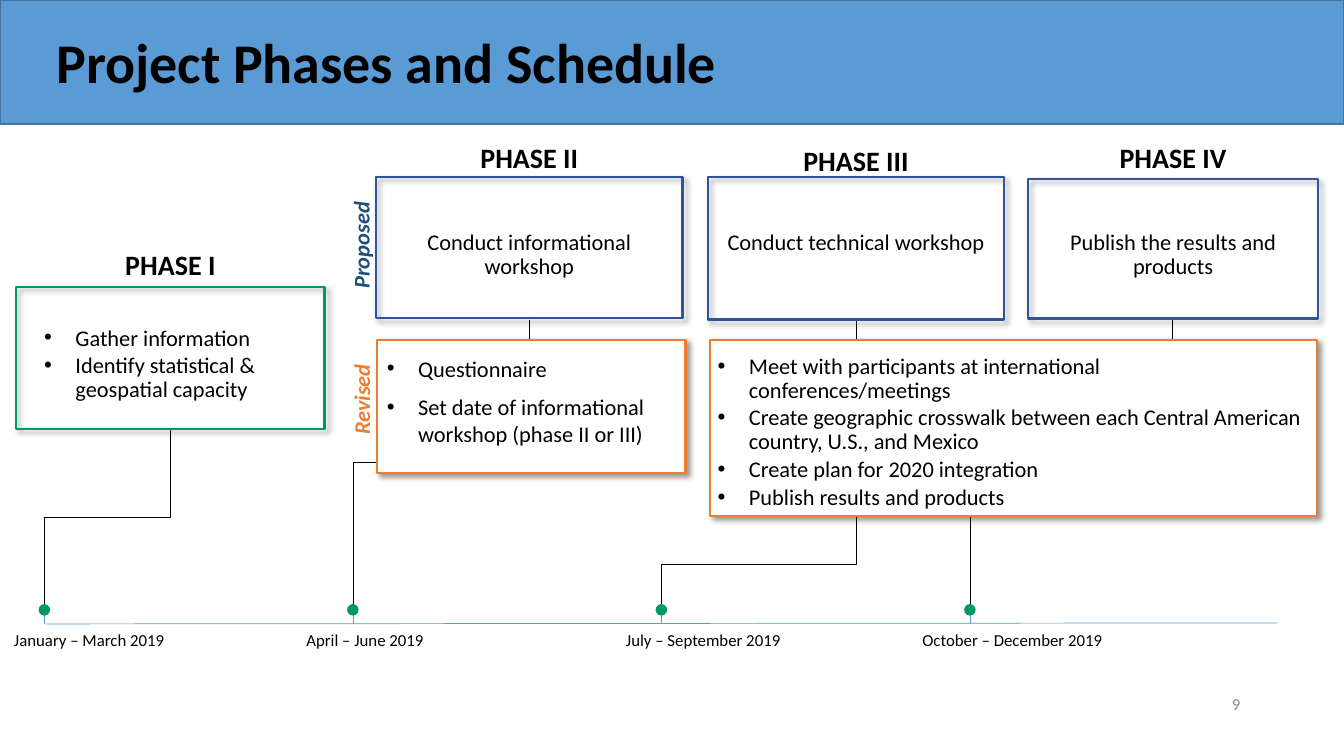
from dataclasses import dataclass

from lxml import etree
from pptx import Presentation
from pptx.dml.color import RGBColor
from pptx.enum.shapes import MSO_CONNECTOR as Link, MSO_SHAPE as Form
from pptx.enum.text import MSO_ANCHOR as Anchor, PP_ALIGN as Align
from pptx.oxml import parse_xml
from pptx.oxml.ns import nsdecls, qn
from pptx.util import Inches, Pt


@dataclass(frozen=True)
class Theme:
    """Colours, font and type sizes of the slide."""
    font: str = "Calibri"
    black: str = "000000"
    white: str = "FFFFFF"
    grey: str = "8C8C8C"
    sky: str = "5B9BD5"
    rim: str = "43739E"
    green: str = "009964"
    blue: str = "2F5597"
    navy: str = "1F4E79"
    orange: str = "ED7D31"
    title: int = 40
    head: int = 20
    body: int = 16
    small: int = 12


THEME = Theme()
BULLET = 0.31


def add_text(slide, lines, left, top, width, height, size=THEME.body,
             color=THEME.black, bold=False, italic=False, align=Align.LEFT,
             anchor=Anchor.TOP, lead=1.0, before=0, after=0, bullet=False,
             turn=0, wrap=True):
    """Add a text box with one paragraph per line and return its frame."""
    box = slide.shapes.add_textbox(
        Inches(left), Inches(top), Inches(width), Inches(height))
    box.rotation = turn
    frame = box.text_frame
    frame.word_wrap = wrap
    frame.vertical_anchor = anchor
    for index, line in enumerate(lines):
        para = frame.paragraphs[0] if index == 0 else frame.add_paragraph()
        if bullet:
            props = para._p.get_or_add_pPr()
            props.set("marL", str(Inches(BULLET)))
            props.set("indent", str(-Inches(BULLET)))
            etree.SubElement(props, qn("a:buFont")).set("typeface", "Arial")
            etree.SubElement(props, qn("a:buChar")).set("char", "•")
        para.alignment = align
        para.line_spacing = lead
        para.space_before = Pt(before if index else 0)
        para.space_after = Pt(after)
        run = para.add_run()
        run.text = line
        font = run.font
        font.name, font.size = THEME.font, Pt(size)
        font.bold, font.italic = bold, italic
        font.color.rgb = RGBColor.from_string(color)
    return frame


def add_form(slide, form, left, top, width, height, line, fill=None,
             weight=1.0, shade=False):
    """Add a preset shape with an outline, and a fill or shadow if asked."""
    shape = slide.shapes.add_shape(
        form, Inches(left), Inches(top), Inches(width), Inches(height))
    shape.shadow.inherit = False
    if fill:
        shape.fill.solid()
        shape.fill.fore_color.rgb = RGBColor.from_string(fill)
    else:
        shape.fill.background()
    shape.line.color.rgb = RGBColor.from_string(line)
    shape.line.width = Pt(weight)
    if shade:
        shape._element.spPr.find(qn("a:effectLst")).append(parse_xml(
            f'<a:outerShdw {nsdecls("a")} blurRad="{Pt(4)}" dist="{Pt(3)}" '
            f'dir="2700000" algn="tl" rotWithShape="0">'
            f'<a:srgbClr val="{THEME.black}"><a:alpha val="40000"/>'
            f'</a:srgbClr></a:outerShdw>'))


def add_box(slide, left, top, width, height, line, fill=None):
    """Add a shaded phase box."""
    add_form(slide, Form.RECTANGLE, left, top, width, height, line,
             fill=fill, weight=1.5, shade=True)


def add_line(slide, x1, y1, x2, y2, color, kind=Link.STRAIGHT):
    """Add a thin connector and return it."""
    link = slide.shapes.add_connector(
        kind, Inches(x1), Inches(y1), Inches(x2), Inches(y2))
    link.line.color.rgb = RGBColor.from_string(color)
    link.line.width = Pt(0.5)
    etree.SubElement(link._element.spPr, qn("a:effectLst"))
    return link


def add_elbow(slide, right, top, left, bottom, bend=0.5):
    """Add an elbow that drops from top right to bottom left."""
    wide, high = right - left, bottom - top
    midx, midy = (left + right) / 2, (top + bottom) / 2
    link = add_line(slide, midx - high / 2, midy - wide / 2,
                    midx + high / 2, midy + wide / 2, THEME.black, Link.ELBOW)
    props = link._element.spPr
    props.find(qn("a:xfrm")).set("rot", str(90 * 60000))
    guide = etree.SubElement(
        props.find(qn("a:prstGeom")).get_or_add_avLst(), qn("a:gd"))
    guide.set("name", "adj1")
    guide.set("fmla", f"val {round(bend * 100000)}")


def add_axis(slide):
    """Draw the timeline with its dates, ticks, dots and elbows."""
    add_line(slide, 0.46, 6.19, 12.67, 6.18, THEME.sky)
    dates = [("January – March 2019", 0.04, 1.71),
             ("April – June 2019", 2.94, 1.38),
             ("July – September 2019", 6.11, 1.75),
             ("October – December 2019", 9.05, 2.01)]
    drops = [(1.69, 4.26, 0.5), (5.25, 3.17, 0.5),
             (8.49, 3.17, 0.86), (11.63, 3.17, 0.5)]
    for index, ((date, left, width), (right, top, bend)) in enumerate(
            zip(dates, drops)):
        spot = 0.44 + 3.06 * index
        add_line(slide, spot, 5.92, spot, 6.19, THEME.sky)
        add_elbow(slide, right, top, spot, 6, bend)
        add_form(slide, Form.FLOWCHART_CONNECTOR, spot - 0.05, 6, 0.1, 0.1,
                 THEME.green, fill=THEME.green)
        add_text(slide, [date], left, 6.2, width, 0.3, size=THEME.small,
                 wrap=False)


def add_phase(slide, name, left, top, width, lead=1.0):
    """Add a centred phase heading."""
    add_text(slide, [name], left, top, width, 0.44, size=THEME.head,
             bold=True, align=Align.CENTER, lead=lead)


def add_tag(slide, name, left, top, width, color):
    """Add an upright row label."""
    add_text(slide, [name], left, top, width, 0.37, color=color, bold=True,
             italic=True, align=Align.CENTER, turn=270)


def add_list(slide, items, left, top, width, height, lead=0.9, before=0):
    """Add a bulleted list and return its frame."""
    return add_text(slide, items, left, top, width, height, lead=lead,
                    before=before, after=2.4, bullet=True)


def main():
    """Build the slide and save it."""
    deck = Presentation()
    deck.slide_width, deck.slide_height = Inches(13.33), Inches(7.5)
    slide = deck.slides.add_slide(deck.slide_layouts[6])

    add_form(slide, Form.RECTANGLE, 0, 0, 13.33, 1.23, THEME.rim,
             fill=THEME.sky)
    add_text(slide, ["Project Phases and Schedule"], 0.46, 0.11, 11.75, 1.07,
             size=THEME.title, bold=True, anchor=Anchor.MIDDLE, lead=0.9)
    add_axis(slide)

    add_phase(slide, "PHASE I", 0.3, 2.44, 2.78, lead=0.9)
    add_box(slide, 0.16, 2.85, 3.06, 1.41, THEME.green)
    tasks = add_list(slide, ["Gather information",
                             "Identify statistical & geospatial capacity"],
                     0.34, 3.03, 2.99, 1.03)
    tasks.paragraphs[0].line_spacing = 1.5

    plans = [
        ("PHASE II", 1.34, "Conduct informational workshop",
         3.73, 1.76, 3.04, 1.4),
        ("PHASE III", 1.37, "Conduct technical workshop",
         7.02, 1.76, 2.94, 1.41),
        ("PHASE IV", 1.34, "Publish the results and products",
         10.2, 1.78, 2.87, 1.38)]
    for name, head, goal, left, top, width, height in plans:
        add_phase(slide, name, left, head, width)
        add_box(slide, left, top, width, height, THEME.blue)
        add_text(slide, [goal], left, 2.24, width, 0.59, align=Align.CENTER,
                 lead=0.9, after=2.4)

    add_tag(slide, "Proposed", 2.87, 2.25, 1.42, THEME.navy)
    add_box(slide, 7.04, 3.37, 6.02, 1.75, THEME.orange, fill=THEME.white)
    add_list(slide, [
        "Meet with participants at international conferences/meetings",
        "Create geographic crosswalk between each Central American country, "
        "U.S., and Mexico",
        "Create plan for 2020 integration",
        "Publish results and products"], 7.02, 3.47, 6.04, 1.68)
    add_box(slide, 3.74, 3.37, 3.06, 1.32, THEME.orange, fill=THEME.white)
    add_tag(slide, "Revised", 2.94, 3.78, 1.29, THEME.orange)
    add_list(slide, ["Questionnaire",
                     "Set date of informational workshop (phase II or III)"],
             3.74, 3.47, 3, 1.03, lead=1.0, before=6)
    add_text(slide, ["9"], 11.87, 6.78, 0.53, 0.4, size=THEME.small,
             color=THEME.grey, align=Align.RIGHT, anchor=Anchor.MIDDLE)
    deck.save("out.pptx")


if __name__ == "__main__":
    main()
